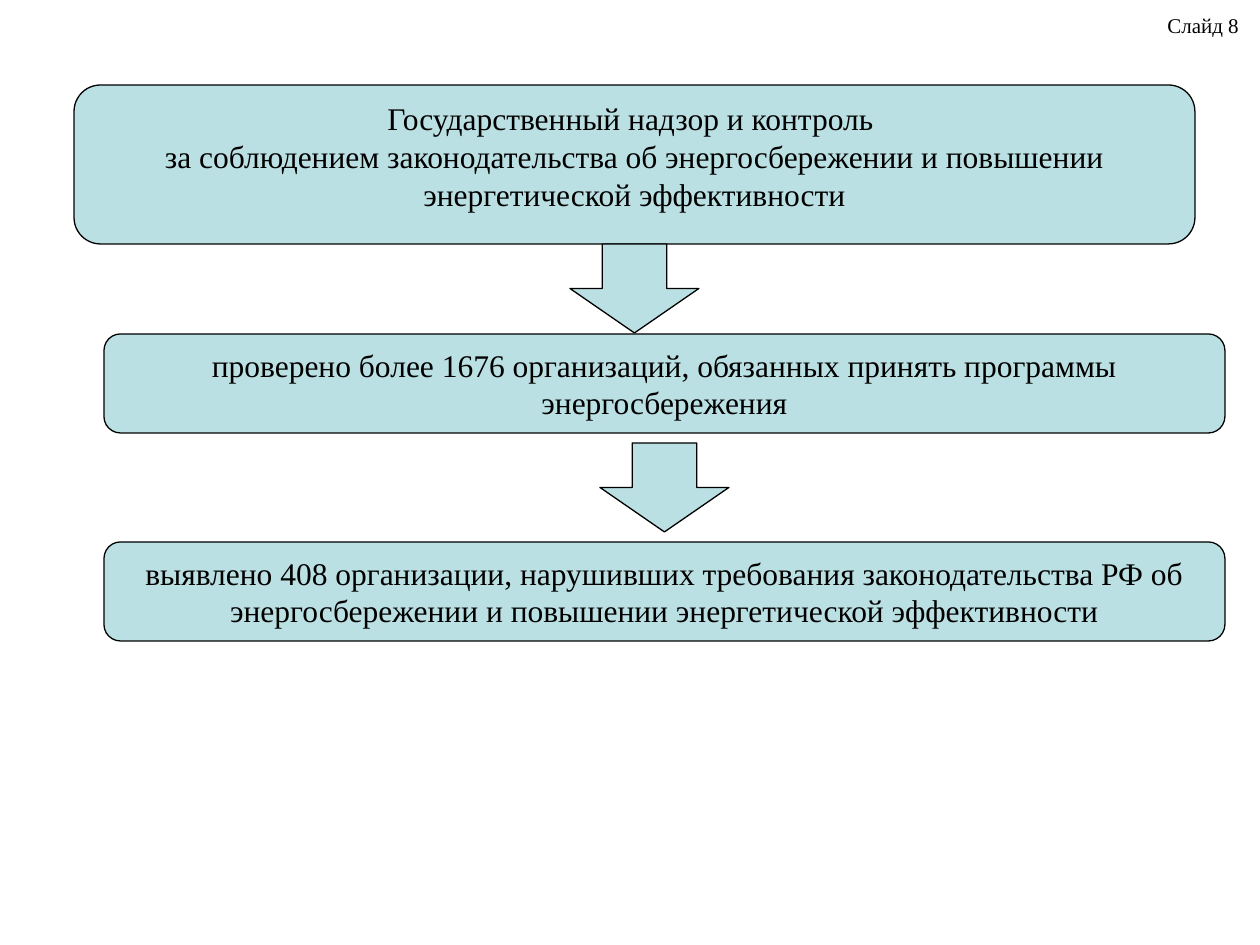
"""Builds the slide on state supervision of energy-saving legislation."""
from pptx import Presentation
from pptx.dml.color import RGBColor
from pptx.enum.shapes import MSO_SHAPE as Shape
from pptx.enum.text import MSO_ANCHOR as Anchor, PP_ALIGN as Align
from pptx.util import Emu, Pt

PX = 914400 // 126
FONT, INK, PALE = "Times New Roman", "000000", "BBE0E3"
BOX_WIDTH, ARROW_WIDTH, ARROW_HEIGHT = 1121, 129, 89

STEPS = [
    (74, 85, 159, Anchor.TOP, [
        "Государственный надзор и контроль ",
        "за соблюдением законодательства об энергосбережении и повышении энергетической эффективности",
    ]),
    (104, 334, 99, Anchor.MIDDLE, [
        "проверено более 1676 организаций, обязанных принять программы энергосбережения",
    ]),
    (104, 542, 99, Anchor.MIDDLE, [
        "выявлено 408 организации, нарушивших требования законодательства РФ об "
        "энергосбережении и повышении энергетической эффективности",
    ]),
]
PAGE_LABEL = "Слайд 8"


def color(code):
    return RGBColor.from_string(code)


def area(*lengths):
    return [Emu(length * PX) for length in lengths]


def write(frame, lines, size, align):
    paragraph = frame.paragraphs[0]
    paragraph.alignment = align
    for index, line in enumerate(lines):
        if index:
            paragraph.add_line_break()
        run = paragraph.add_run()
        run.text = line
        run.font.name, run.font.size = FONT, Pt(size)
        run.font.color.rgb = color(INK)


def add_block(slide, preset, *place):
    block = slide.shapes.add_shape(preset, *area(*place))
    block.shadow.inherit = False
    block.fill.solid()
    block.fill.fore_color.rgb = color(PALE)
    block.line.color.rgb = color(INK)
    block.line.width = Pt(0.75)
    return block


def main():
    deck = Presentation()
    deck.slide_width, deck.slide_height = area(1260, 945)
    slide = deck.slides.add_slide(deck.slide_layouts[6])

    for left, top, height, anchor, lines in STEPS:
        box = add_block(slide, Shape.ROUNDED_RECTANGLE, left, top, BOX_WIDTH, height)
        box.text_frame.word_wrap = True
        box.text_frame.vertical_anchor = anchor
        write(box.text_frame, lines, 18, Align.CENTER)

    for (left, top, height, *_), (_, next_top, *_) in zip(STEPS, STEPS[1:]):
        gap = next_top - top - height
        arrow_left = left + (BOX_WIDTH - ARROW_WIDTH) // 2
        arrow_top = top + height + (gap - ARROW_HEIGHT) // 2
        add_block(slide, Shape.DOWN_ARROW, arrow_left, arrow_top, ARROW_WIDTH, ARROW_HEIGHT)

    label = slide.shapes.add_textbox(*area(1155, 6, 100, 45))
    label.text_frame.word_wrap = False
    write(label.text_frame, [PAGE_LABEL], 12, Align.LEFT)

    deck.save("out.pptx")


if __name__ == "__main__":
    main()
